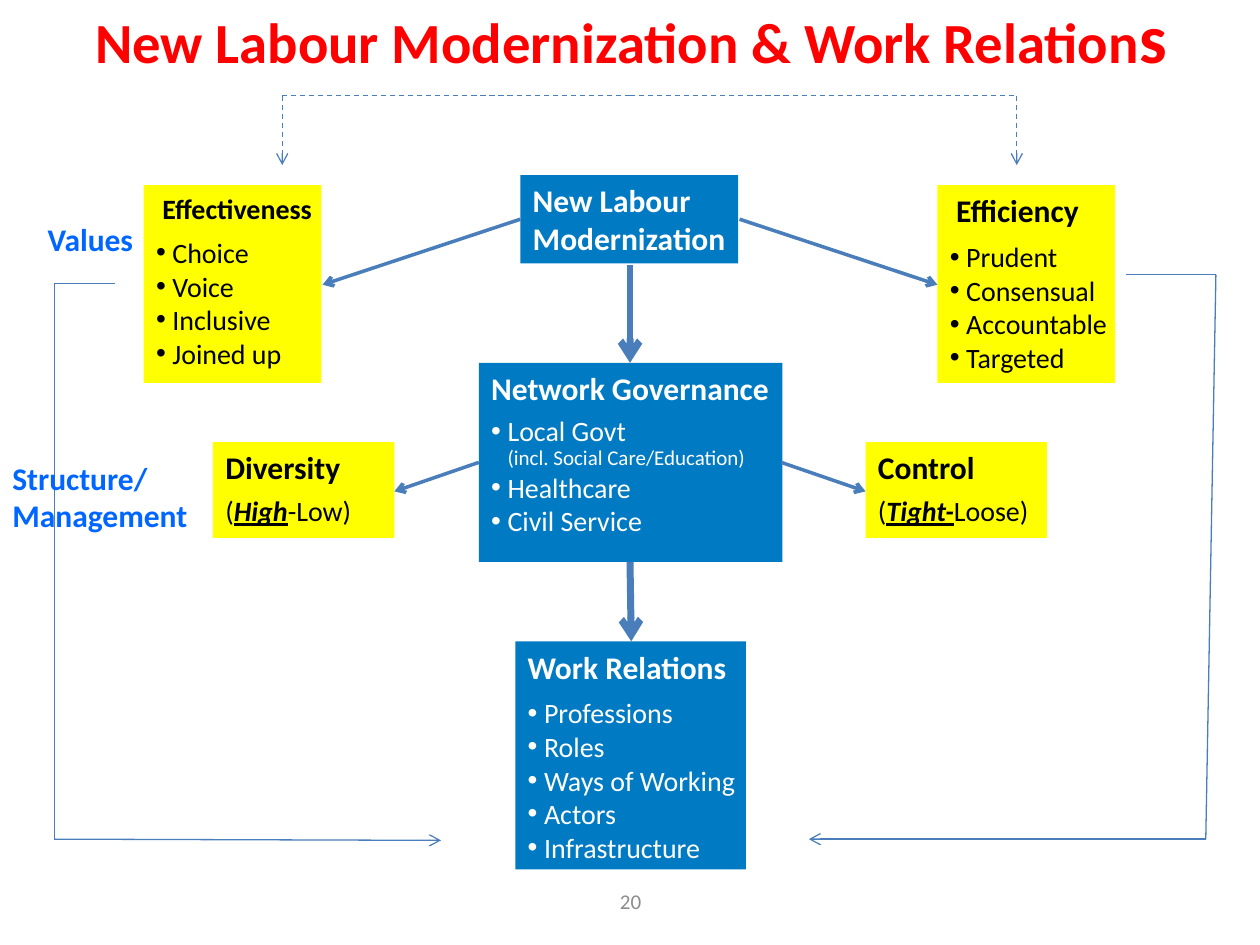
from pptx import Presentation
from pptx.dml.color import RGBColor
from pptx.enum.dml import MSO_LINE
from pptx.enum.shapes import MSO_CONNECTOR, MSO_SHAPE
from pptx.enum.text import MSO_ANCHOR, MSO_AUTO_SIZE, PP_ALIGN
from pptx.oxml.ns import qn
from pptx.util import Inches, Pt
from lxml import etree

RECT, STRAIGHT, DASH = MSO_SHAPE.RECTANGLE, MSO_CONNECTOR.STRAIGHT, MSO_LINE.DASH
TOP, MIDDLE = MSO_ANCHOR.TOP, MSO_ANCHOR.MIDDLE
LEFT, CENTER = PP_ALIGN.LEFT, PP_ALIGN.CENTER
RED = RGBColor(0xFF, 0x00, 0x00)
WHITE = RGBColor(0xFF, 0xFF, 0xFF)
BLACK = RGBColor(0x00, 0x00, 0x00)
BLUE = RGBColor(0x00, 0x7A, 0xC2)
YELLOW = RGBColor(0xFF, 0xFF, 0x00)
LABEL = RGBColor(0x00, 0x66, 0xFF)
GREY = RGBColor(0x8C, 0x8C, 0x8C)
LINE = RGBColor(0x4A, 0x7E, 0xBB)
FONT = "Calibri"
BULLET_INDENT = 0.13

TITLE = [("New Labour Modernization & Work Relation", 32.4), ("s", 39.6)]
HEADS = [
    dict(at=(4.13, 1.39, 1.73, 0.7), fill=BLUE, color=WHITE, anchor=MIDDLE,
         heads=["New Labour", "Modernization"]),
    dict(at=(1.14, 1.47, 1.41, 1.57), fill=YELLOW, color=BLACK, heads=["Effectiveness"],
         size=16, indent=0.05, after=6, bullets=["Choice", "Voice", "Inclusive", "Joined up"]),
    dict(at=(7.44, 1.47, 1.41, 1.57), fill=YELLOW, color=BLACK, heads=["Efficiency"],
         indent=0.05, after=6, bullets=["Prudent", "Consensual", "Accountable", "Targeted"]),
    dict(at=(3.8, 2.88, 2.41, 1.58), fill=BLUE, color=WHITE, heads=["Network Governance"],
         after=6, bullets=["Local Govt", "Healthcare", "Civil Service"],
         detail="(incl. Social Care/Education)"),
    dict(at=(4.09, 5.09, 1.83, 1.81), fill=BLUE, color=WHITE, heads=["Work Relations"], after=6,
         bullets=["Professions", "Roles", "Ways of Working", "Actors", "Infrastructure"]),
    dict(at=(1.69, 3.51, 1.44, 0.76), fill=YELLOW, color=BLACK, heads=["Diversity"],
         after=4, rating=("(", "High", "-Low)")),
    dict(at=(6.87, 3.51, 1.44, 0.76), fill=YELLOW, color=BLACK, heads=["Control"],
         after=4, rating=("(", "Tight-", "Loose)")),
]
LABELS = [
    ((0.28, 1.7, 0.88, 0.4), ["Values"]),
    ((0, 3.59, 1.6, 0.71), ["Structure/", "Management"]),
]
ARROWS = [
    ((5, 2.1), (5, 2.88), 4),
    ((5, 4.46), (5.01, 5.09), 4),
    ((4.13, 1.74), (2.56, 2.26), 2),
    ((5.87, 1.74), (7.44, 2.26), 2),
    ((3.8, 3.67), (3.13, 3.9), 2),
    ((6.2, 3.67), (6.87, 3.9), 2),
]
ROUTES = [
    ([(5, 0.76), (8.07, 0.76), (8.07, 1.31)], DASH),
    ([(5, 0.76), (2.24, 0.76), (2.24, 1.31)], DASH),
    ([(0.91, 2.25), (0.43, 2.25), (0.43, 6.66), (3.5, 6.67)], None),
    ([(8.94, 2.18), (9.65, 2.18), (9.57, 6.66), (6.42, 6.66)], None),
]


def add_text(p, text, size=18, color=BLACK, bold=False, italic=False, underline=False):
    r = p.add_run()
    r.text = text
    f = r.font
    f.name, f.size, f.color.rgb = FONT, Pt(size), color
    f.bold, f.italic, f.underline = bold, italic, underline


def next_paragraph(tf, align=LEFT, after=0):
    p = tf.paragraphs[0]
    if p.runs:
        p = tf.add_paragraph()
    p.alignment, p.space_after = align, Pt(after)
    return p


def indent(p, left, first=0):
    pPr = p._p.get_or_add_pPr()
    pPr.set("marL", str(Inches(left)))
    pPr.set("indent", str(Inches(first)))
    return pPr


def add_bullet(tf, text, color, detail=None):
    p = next_paragraph(tf)
    pPr = indent(p, BULLET_INDENT, -BULLET_INDENT)
    if detail:
        p.line_spacing = 0.9
    etree.SubElement(pPr, qn("a:buFont")).set("typeface", "Arial")
    etree.SubElement(pPr, qn("a:buChar")).set("char", "•")
    add_text(p, text, size=16, color=color)
    if detail:
        p.add_line_break()
        add_text(p, detail, size=12, color=color)


def add_box(s, at, fill, color, heads, size=18, indent_left=0, after=0, anchor=TOP,
            bullets=(), detail=None, rating=()):
    sp = s.shapes.add_shape(RECT, *map(Inches, at))
    sp.shadow.inherit = False
    sp.fill.solid()
    sp.fill.fore_color.rgb = fill
    sp.line.fill.background()
    tf = sp.text_frame
    tf.word_wrap, tf.vertical_anchor = False, anchor
    for head in heads:
        p = next_paragraph(tf, after=after)
        indent(p, indent_left)
        add_text(p, head, size=size, color=color, bold=True)
    for i, bullet in enumerate(bullets):
        add_bullet(tf, bullet, color, detail if i == 0 else None)
    if rating:
        p = next_paragraph(tf)
        for i, part in enumerate(rating):
            strong = i == 1
            add_text(p, part, size=16, color=color, bold=strong, italic=strong, underline=strong)


def add_line(s, start, end, width=0.75, dash=None, arrow=True):
    c = s.shapes.add_connector(STRAIGHT, *map(Inches, start + end))
    c.line.color.rgb, c.line.width = LINE, Pt(width)
    if dash:
        c.line.dash_style = dash
    if arrow:
        etree.SubElement(c.line._get_or_add_ln(), qn("a:tailEnd")).set("type", "arrow")
    etree.SubElement(c._element.spPr, qn("a:effectLst"))


def add_label(s, at, lines, size=18, color=LABEL, bold=True, align=LEFT, anchor=TOP):
    tf = s.shapes.add_textbox(*map(Inches, at)).text_frame
    tf.word_wrap, tf.vertical_anchor = align == CENTER, anchor
    for line in lines:
        add_text(next_paragraph(tf, align), line, size=size, color=color, bold=bold)


def main():
    prs = Presentation()
    prs.slide_width, prs.slide_height = Inches(10), Inches(7.5)
    s = prs.slides.add_slide(prs.slide_layouts[5])
    title = s.shapes.title
    title.left, title.top, title.width, title.height = map(Inches, (0.51, -0.34, 9, 1.25))
    tf = title.text_frame
    tf.word_wrap, tf.auto_size, tf.vertical_anchor = True, MSO_AUTO_SIZE.NONE, MIDDLE
    p = next_paragraph(tf, CENTER)
    for text, size in TITLE:
        add_text(p, text, size=size, color=RED, bold=True)

    for box in HEADS:
        options = dict(box)
        options["indent_left"] = options.pop("indent", 0)
        add_box(s, **options)
    for start, end, width in ARROWS:
        add_line(s, start, end, width)
    for points, dash in ROUTES:
        legs = list(zip(points, points[1:]))
        for leg in legs:
            add_line(s, *leg, dash=dash, arrow=leg == legs[-1])
    for at, lines in LABELS:
        add_label(s, at, lines)
    add_label(s, (3.42, 6.95, 3.17, 0.4), ["20"], size=12, color=GREY, bold=False,
              align=CENTER, anchor=MIDDLE)
    prs.save("out.pptx")


if __name__ == "__main__":
    main()
